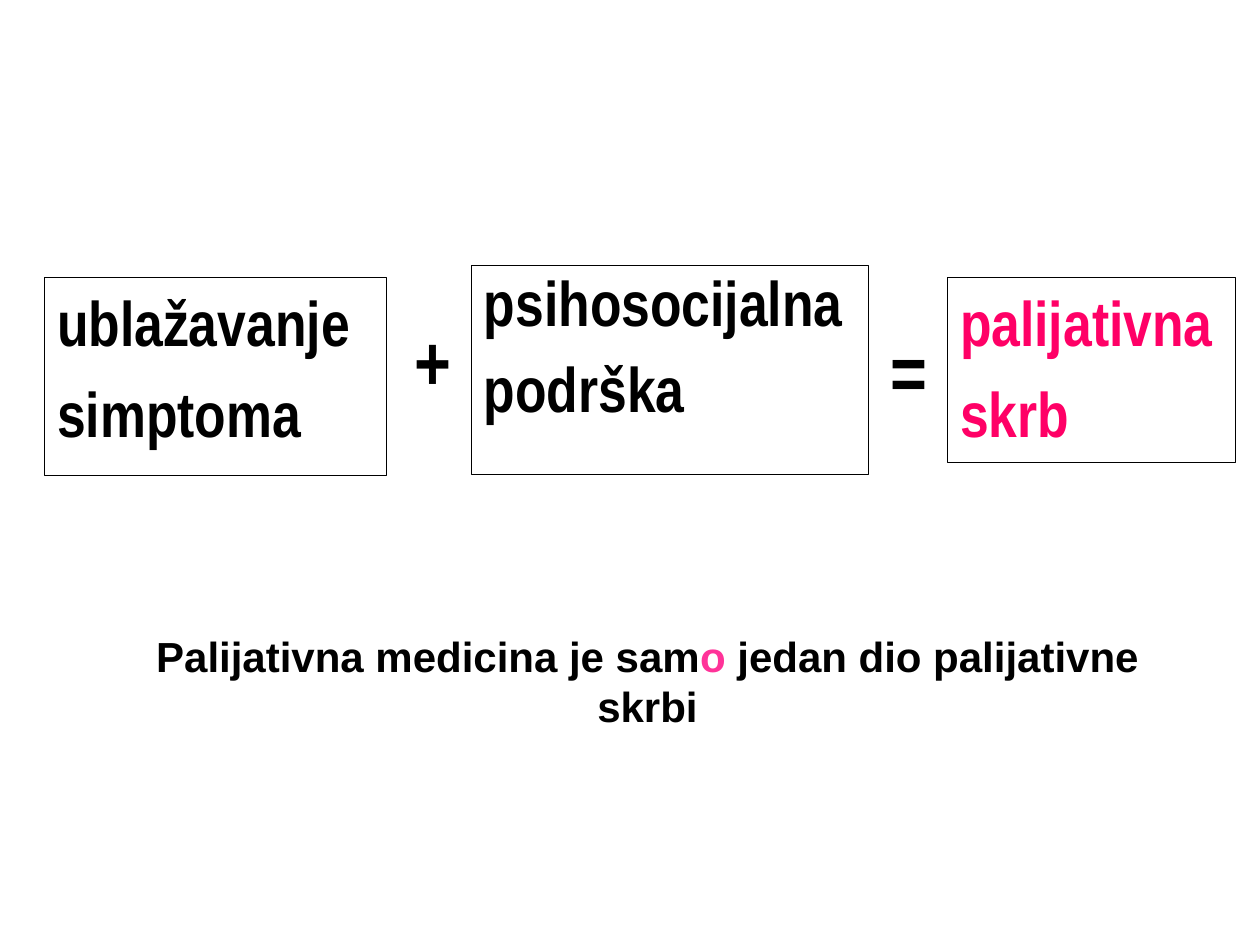
from dataclasses import dataclass

from pptx import Presentation
from pptx.dml.color import RGBColor
from pptx.enum import shapes, text
from pptx.util import Pt


@dataclass(frozen=True)
class Theme:
    ink: RGBColor = RGBColor(0, 0, 0)
    rose: RGBColor = RGBColor(0xFF, 0x00, 0x66)
    pink: RGBColor = RGBColor(0xFF, 0x33, 0x99)
    narrow: str = "Arial Narrow"
    plain: str = "Arial"
    term: int = 36
    sign: int = 44
    note: int = 24
    edge: float = 0.5


class Deck:
    def __init__(self, slide, theme):
        self.slide, self.theme = slide, theme

    def style(self, run, face, size, color):
        font = run.font
        font.name, font.size, font.bold = face, Pt(size), True
        font.color.rgb = color

    def term(self, area, lines, color, gap, lead=1.0):
        """Outlined box with one word a line."""
        box = self.slide.shapes.add_shape(
            shapes.MSO_SHAPE.RECTANGLE, *map(Pt, area))
        box.shadow.inherit = False
        box.fill.background()
        box.line.color.rgb = self.theme.ink
        box.line.width = Pt(self.theme.edge)
        frame = box.text_frame
        frame.word_wrap = True
        frame.vertical_anchor = text.MSO_ANCHOR.TOP
        frame.text = "\n".join(lines)
        for i, para in enumerate(frame.paragraphs):
            para.alignment = text.PP_ALIGN.LEFT
            para.line_spacing = lead
            para.space_before = Pt(gap if i else 0)
            self.style(para.runs[0], self.theme.narrow, self.theme.term, color)

    def label(self, area, parts, face, size, align):
        """Free text made of (words, color) parts."""
        box = self.slide.shapes.add_textbox(*map(Pt, area))
        frame = box.text_frame
        frame.word_wrap = True
        para = frame.paragraphs[0]
        para.alignment = align
        for words, color in parts:
            run = para.add_run()
            run.text = words
            self.style(run, face, size, color)

    def sign(self, left, top, mark):
        self.label((left, top, 34, 60), [(mark, self.theme.ink)],
                   self.theme.narrow, self.theme.sign, text.PP_ALIGN.LEFT)


def main():
    prs = Presentation()
    prs.slide_width, prs.slide_height = Pt(720), Pt(540)
    theme = Theme()
    deck = Deck(prs.slides.add_slide(prs.slide_layouts[6]), theme)

    # Terms of the sum
    deck.term((269.5, 152, 227, 119), ["psihosocijalna", "podrška"],
              theme.ink, gap=10, lead=0.9)
    deck.term((541.5, 158.5, 164.5, 106), ["palijativna", "skrb"],
              theme.rose, gap=9)
    deck.term((25.5, 158.5, 195.5, 113), ["ublažavanje", "simptoma"],
              theme.ink, gap=9)

    # Signs between the terms
    deck.sign(502, 181.5, "=")
    deck.sign(230, 175.5, "+")

    # Closing remark
    deck.label((53, 356.5, 634, 36),
               [("Palijativna medicina je sam", theme.ink),
                ("o", theme.pink),
                (" jedan dio palijativne skrbi", theme.ink)],
               theme.plain, theme.note, text.PP_ALIGN.CENTER)

    prs.save("out.pptx")


if __name__ == "__main__":
    main()
